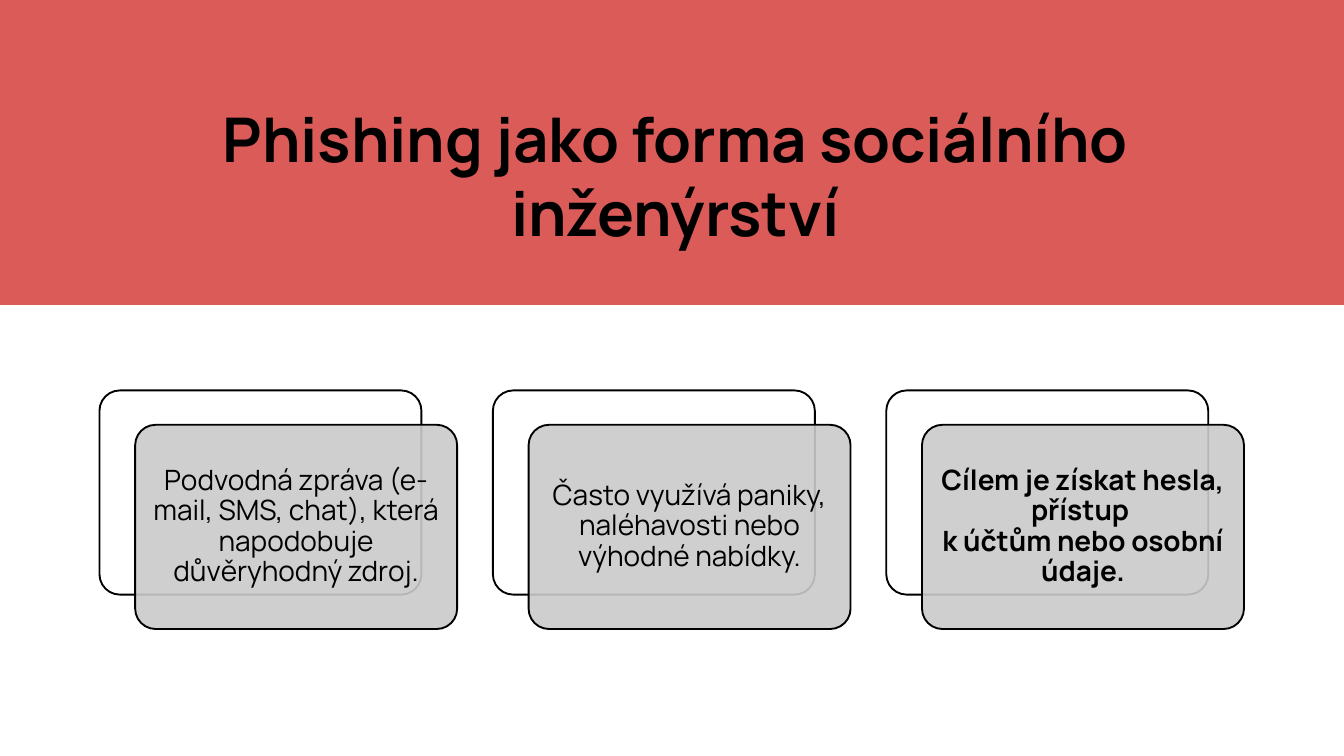
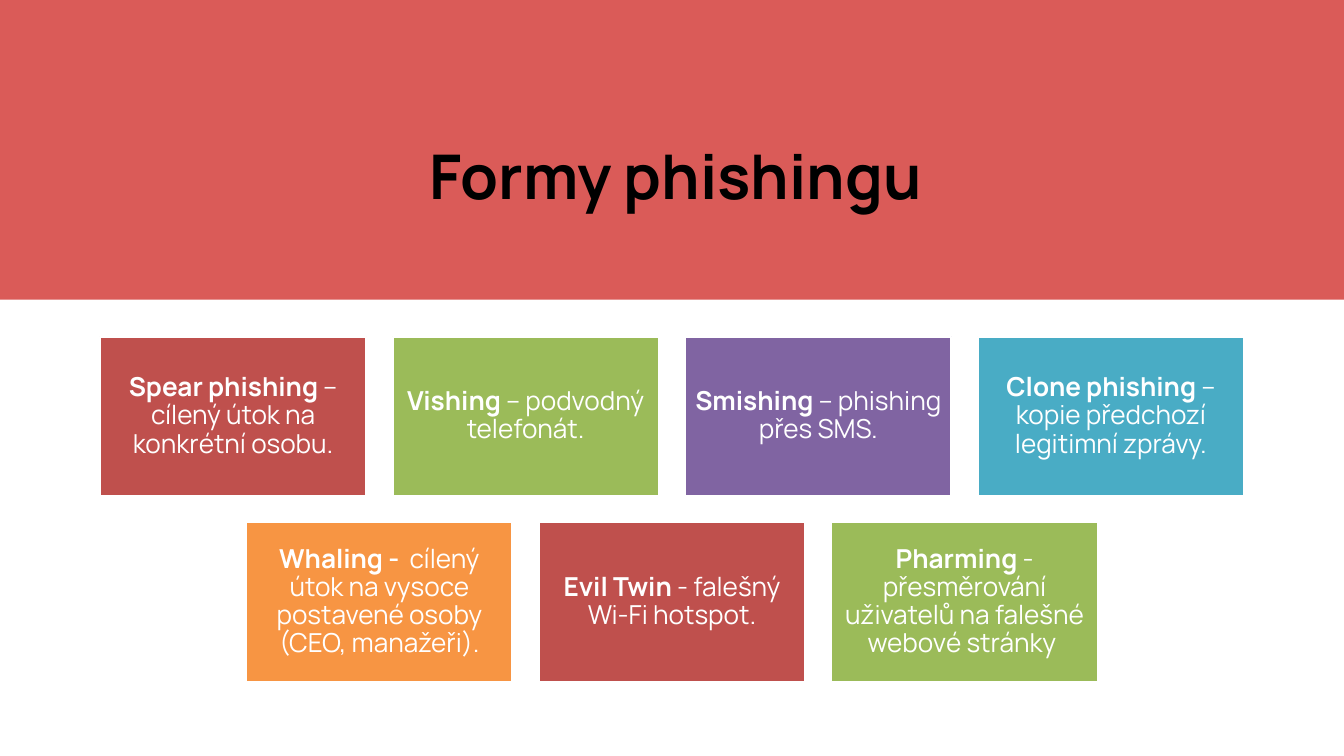
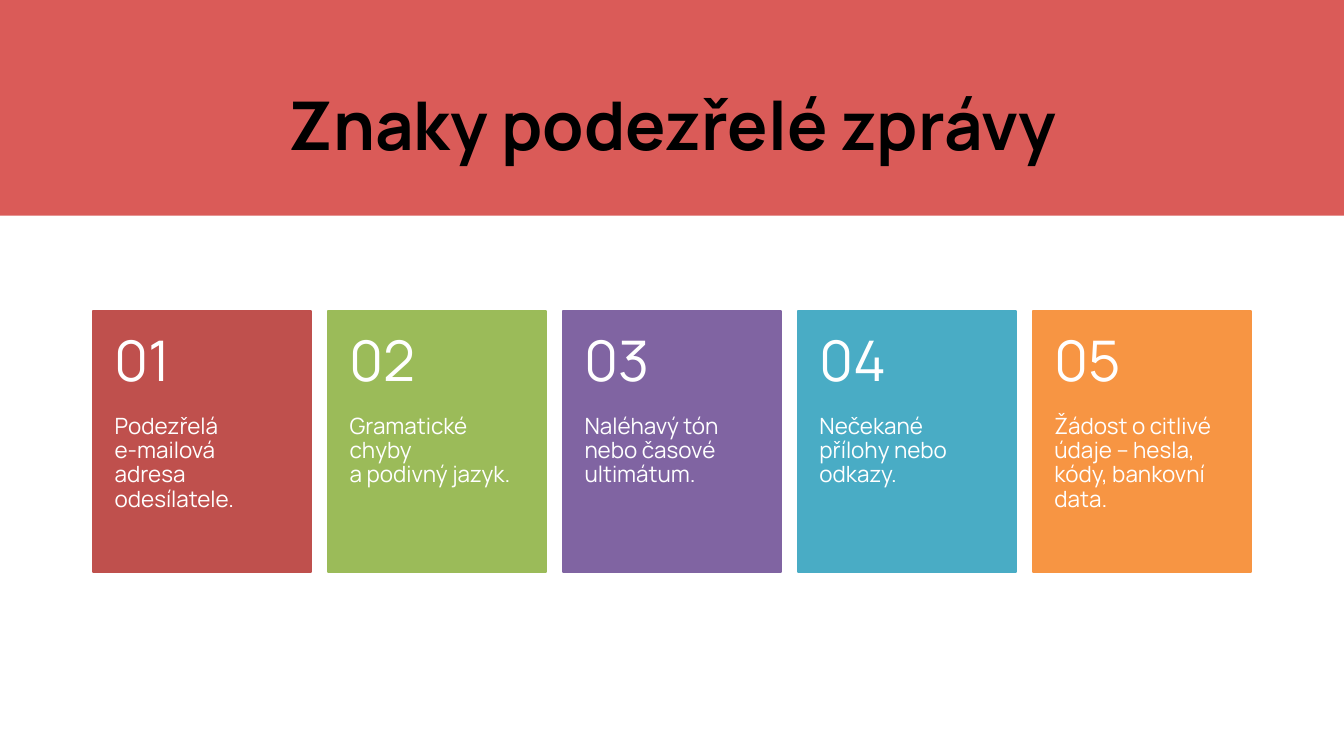
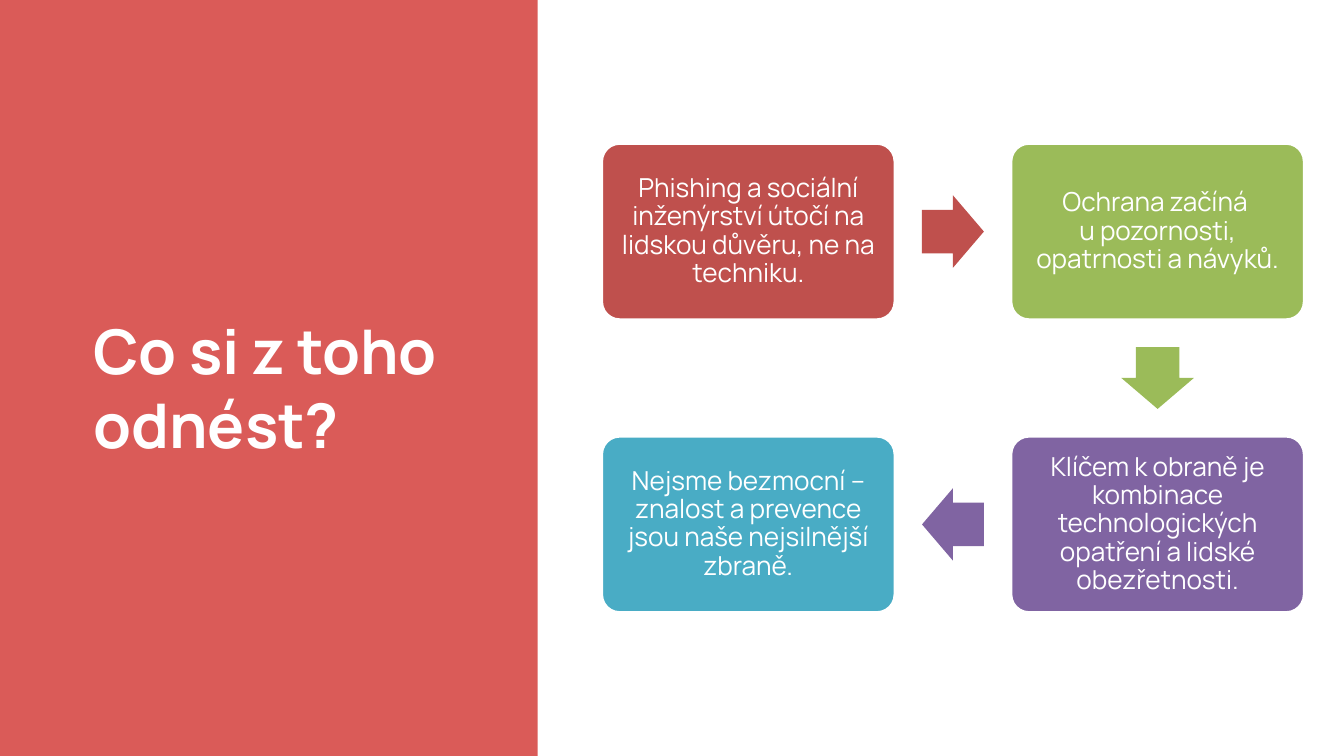
"""Build four slides about phishing and social engineering."""
import itertools

import lxml.etree
import pptx
import pptx.dml.color
import pptx.enum.shapes
import pptx.enum.text
import pptx.oxml.ns
import pptx.util

Cm = pptx.util.Cm
Pt = pptx.util.Pt
RGBColor = pptx.dml.color.RGBColor
SHAPE = pptx.enum.shapes.MSO_SHAPE
ALIGN = pptx.enum.text.PP_ALIGN
ANCHOR = pptx.enum.text.MSO_ANCHOR

FONT = "Manrope"
SLIDE_WIDTH, SLIDE_HEIGHT = 50.8, 28.58

BLACK = RGBColor(0x00, 0x00, 0x00)
WHITE = RGBColor(0xFF, 0xFF, 0xFF)
GREY = RGBColor(0xCA, 0xCA, 0xCA)
CORAL = RGBColor(0xDA, 0x5B, 0x58)
RED = RGBColor(0xBF, 0x50, 0x4D)
GREEN = RGBColor(0x9B, 0xBB, 0x59)
PURPLE = RGBColor(0x80, 0x64, 0xA2)
TEAL = RGBColor(0x49, 0xAC, 0xC5)
ORANGE = RGBColor(0xF7, 0x95, 0x43)
ACCENTS = (RED, GREEN, PURPLE, TEAL, ORANGE)

DEFINITIONS = (
    "Podvodná zpráva (e-mail, SMS, chat), která napodobuje důvěryhodný zdroj.",
    "Často využívá paniky, naléhavosti nebo výhodné nabídky.",
    "Cílem je získat hesla, přístup \nk účtům nebo osobní údaje.",
)
PHISHING_FORMS = (
    (
        ("Spear phishing ", "– cílený útok na konkrétní osobu."),
        ("Vishing", " – podvodný telefonát."),
        ("Smishing", " – phishing přes SMS."),
        ("Clone phishing ", "– kopie předchozí legitimní zprávy."),
    ),
    (
        ("Whaling - ", " cílený útok na vysoce postavené osoby (CEO, manažeři)."),
        ("Evil Twin ", "- falešný Wi-Fi hotspot."),
        ("Pharming", " - přesměrování uživatelů na falešné webové stránky "),
    ),
)
WARNING_SIGNS = (
    "Podezřelá \ne-mailová adresa odesílatele.",
    "Gramatické chyby \na podivný jazyk.",
    "Naléhavý tón nebo časové ultimátum.",
    "Nečekané přílohy nebo odkazy.",
    "Žádost o citlivé údaje – hesla, kódy, bankovní data.",
)
TAKEAWAYS = (
    (22.76, 5.44, "Phishing a sociální inženýrství útočí na lidskou důvěru, ne na techniku."),
    (38.23, 5.44, "Ochrana začíná \nu pozornosti, opatrnosti a návyků."),
    (38.23, 16.51, "Klíčem k obraně je kombinace technologických opatření a lidské obezřetnosti."),
    (22.76, 16.51, "Nejsme bezmocní – znalost a prevence jsou naše nejsilnější zbraně."),
)


def write_text(shape, text, *, size, color=WHITE, bold=False, lead="", align=ALIGN.CENTER,
               anchor=ANCHOR.MIDDLE, inset=(0.25, 0.13, 0.25, 0.13), spacing=0.9):
    """Fill a shape with one formatted paragraph, opened by an optional bold lead."""
    frame = shape.text_frame
    frame.word_wrap = True
    frame.vertical_anchor = anchor
    (frame.margin_left, frame.margin_top,
     frame.margin_right, frame.margin_bottom) = (Cm(side) for side in inset)
    paragraph = frame.paragraphs[0]
    paragraph.alignment = align
    paragraph.line_spacing = spacing

    def add_run(words, weight):
        run = paragraph.add_run()
        run.text = words
        run.font.name = FONT
        run.font.size = Pt(size)
        run.font.bold = weight
        run.font.color.rgb = color

    if lead:
        add_run(lead, True)
    for number, line in enumerate(text.split("\n")):
        if number:
            paragraph.add_line_break()
        add_run(line, bold)


def add_box(slide, left, top, width, height, fill, *, kind=SHAPE.RECTANGLE, outline=None,
            adjustments=(), opacity=None):
    """Add a filled preset shape with an optional outline and opacity in percent."""
    box = slide.shapes.add_shape(kind, Cm(left), Cm(top), Cm(width), Cm(height))
    box.shadow.inherit = False
    box.fill.solid()
    box.fill.fore_color.rgb = fill
    if outline is None:
        box.line.fill.background()
    else:
        box.line.color.rgb = outline
        box.line.width = Pt(2)
    for index, value in enumerate(adjustments):
        box.adjustments[index] = value
    if opacity is not None:
        color = box.fill._xPr.find(".//" + pptx.oxml.ns.qn("a:srgbClr"))
        alpha = lxml.etree.SubElement(color, pptx.oxml.ns.qn("a:alpha"))
        alpha.set("val", str(opacity * 1000))
    return box


def add_rounded(slide, left, top, width, height, fill, **style):
    """Add a card with rounded corners."""
    return add_box(slide, left, top, width, height, fill,
                   kind=SHAPE.ROUNDED_RECTANGLE, adjustments=(0.1,), **style)


def add_label(slide, left, top, width, height, text, **style):
    """Add a text box."""
    label = slide.shapes.add_textbox(Cm(left), Cm(top), Cm(width), Cm(height))
    write_text(label, text, **style)


def add_titled_slide(deck, title, band, title_area, *, size=66, **style):
    """Add a blank slide with a coral band from its corner and a bold title."""
    slide = deck.slides.add_slide(deck.slide_layouts[6])
    add_box(slide, 0, 0, *band, CORAL)
    add_label(slide, *title_area, title, size=size, bold=True, spacing=1.0, **style)
    return slide


def centred_lefts(count, width, gap):
    """Return the left edges of a row centred on the slide."""
    start = (SLIDE_WIDTH - count * width - (count - 1) * gap) / 2
    return [start + index * (width + gap) for index in range(count)]


def add_definitions(slide):
    """Add the three definitions, each on a card in front of an outlined one."""
    width, height, top = 12.17, 7.72, 14.76
    for index, definition in enumerate(DEFINITIONS):
        left = 3.76 + index * 14.87
        add_rounded(slide, left, top, width, height, WHITE, outline=BLACK)
        card = add_rounded(slide, left + 1.35, top + 1.3, width, height, GREY,
                           outline=BLACK, opacity=90)
        write_text(card, definition, size=30, color=BLACK, inset=(0.41,) * 4,
                   bold=definition == DEFINITIONS[-1])


def add_phishing_forms(slide):
    """Add the rows of coloured tiles that name the forms of phishing."""
    width, height, gap = 10.06, 6.02, 1
    colors = itertools.cycle(ACCENTS)
    for row, forms in enumerate(PHISHING_FORMS):
        top = 12.73 + row * (height + gap)
        for left, (name, meaning) in zip(centred_lefts(len(forms), width, gap), forms):
            tile = add_box(slide, left, top, width, height, next(colors), outline=WHITE)
            write_text(tile, meaning, lead=name, size=28, inset=(0.36,) * 4)


def add_warning_signs(slide):
    """Add the numbered columns of warning signs."""
    width, top, number_height, sign_height = 8.23, 11.76, 3.94, 5.94
    lefts = centred_lefts(len(WARNING_SIGNS), width, 0.65)
    for number, (left, color, sign) in enumerate(zip(lefts, ACCENTS, WARNING_SIGNS), 1):
        add_box(slide, left, top, width, number_height + sign_height, color, outline=color)
        add_label(slide, left, top + number_height, width, sign_height, sign, size=24,
                  align=ALIGN.LEFT, anchor=ANCHOR.TOP, inset=(0.81, 0, 0.81, 0.91))
        add_label(slide, left, top, width, number_height, f"{number:02}", size=60,
                  align=ALIGN.LEFT, inset=(0.81, 0.46, 0.81, 0.46))


def add_takeaways(slide):
    """Add the cycle of takeaways with an arrow midway between neighbours."""
    width, height = 11.05, 6.63
    arrow_width, arrow_height = 2.34, 2.74
    for (left, top, takeaway), color in zip(TAKEAWAYS, ACCENTS):
        card = add_rounded(slide, left, top, width, height, color, outline=WHITE)
        write_text(card, takeaway, size=28, inset=(0.3,) * 4)
    for turn, (start, end) in enumerate(itertools.pairwise(TAKEAWAYS)):
        arrow = add_box(slide, (start[0] + end[0] + width - arrow_width) / 2,
                        (start[1] + end[1] + height - arrow_height) / 2,
                        arrow_width, arrow_height, ACCENTS[turn],
                        kind=SHAPE.RIGHT_ARROW, adjustments=(0.6, 0.5))
        arrow.rotation = 90 * turn


def main():
    """Build and save the deck."""
    deck = pptx.Presentation()
    deck.slide_width, deck.slide_height = Cm(SLIDE_WIDTH), Cm(SLIDE_HEIGHT)
    wide_title = (4.34, 3.38, 42.39, 6.48)

    add_definitions(add_titled_slide(
        deck, "Phishing jako forma sociálního inženýrství",
        (SLIDE_WIDTH, 11.53), wide_title, color=BLACK))
    add_phishing_forms(add_titled_slide(
        deck, "Formy phishingu", (SLIDE_WIDTH, 11.33), wide_title, color=BLACK))
    add_warning_signs(add_titled_slide(
        deck, "Znaky podezřelé zprávy", (SLIDE_WIDTH, 8.15),
        (3.51, 2.31, 43.82, 4.72), size=72, color=BLACK))
    add_takeaways(add_titled_slide(
        deck, "Co si z toho odnést?", (20.32, SLIDE_HEIGHT),
        (3.28, 3.51, 14.66, 22.25), align=ALIGN.LEFT))
    deck.save("out.pptx")


if __name__ == "__main__":
    main()
